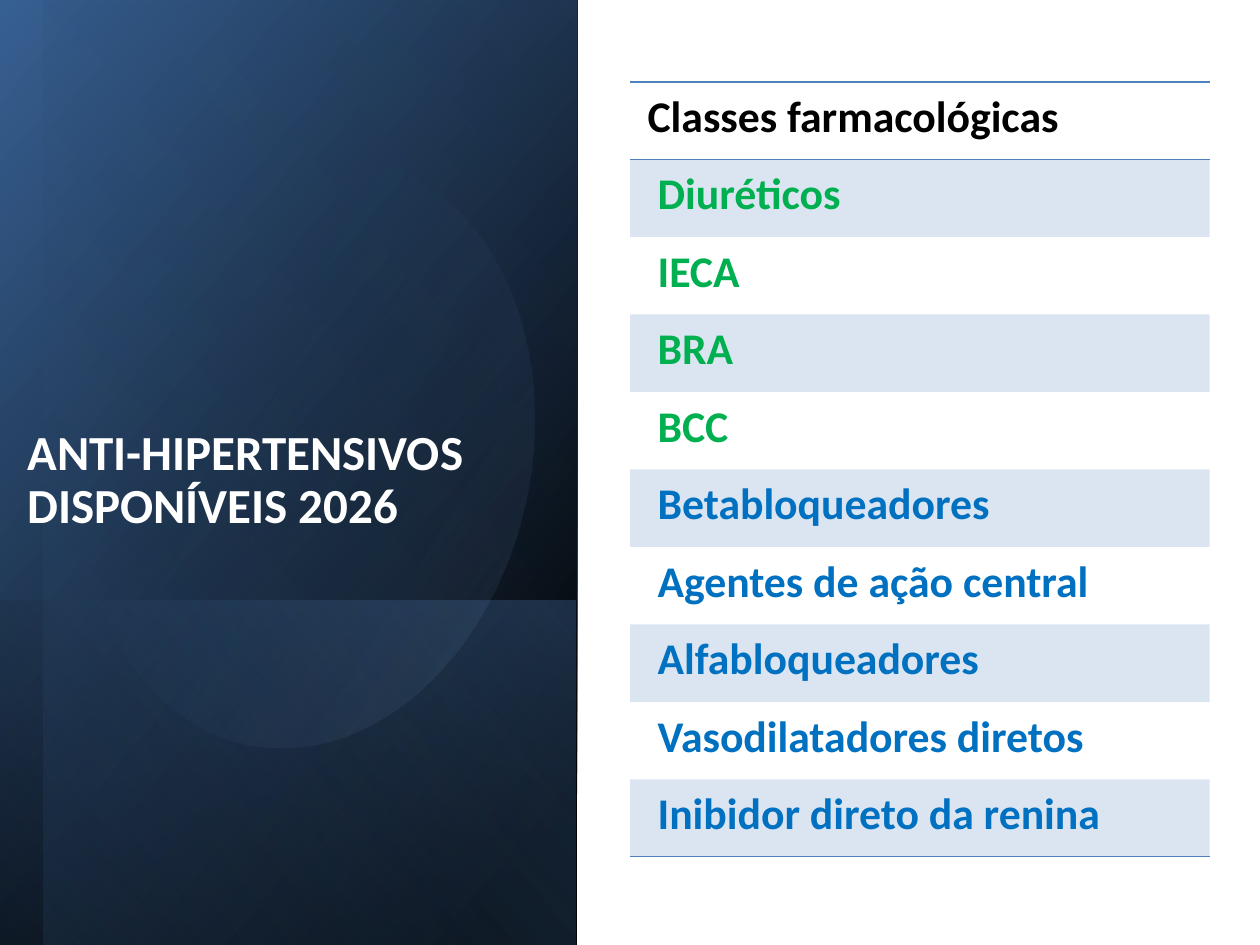
import pptx
import pptx.dml.color
import pptx.enum.shapes
import pptx.enum.text
import pptx.oxml
import pptx.oxml.ns
import pptx.util
from lxml import etree

Inches = pptx.util.Inches
Pt = pptx.util.Pt
qn = pptx.oxml.ns.qn
RECTANGLE = pptx.enum.shapes.MSO_SHAPE.RECTANGLE
OVAL = pptx.enum.shapes.MSO_SHAPE.OVAL
NO_STYLE = "{2D5ABB26-0587-4C30-8999-92F81FD0307C}"


def rgb(value):
    return pptx.dml.color.RGBColor.from_string(value)


def add_color(parent, color, opacity=100):
    node = etree.SubElement(parent, qn("a:srgbClr"), val=color)
    if opacity < 100:
        etree.SubElement(node, qn("a:alpha"), val=str(opacity * 1000))


class SlideBuilder:
    font = "Calibri"
    blue = "4F81BD"

    def __init__(self, slide):
        self.slide = slide

    def style(self, paragraph, size, color):
        for run in paragraph.runs:
            run.font.name = self.font
            run.font.size = Pt(size)
            run.font.bold = True
            run.font.color.rgb = rgb(color)

    def gradient_shape(self, kind, box, rotation, angle, stops, flip=False):
        shape = self.slide.shapes.add_shape(kind, *map(Inches, box))
        shape.rotation = rotation
        shape.shadow.inherit = False
        shape.line.fill.background()
        shape.fill.gradient()
        shape.fill.gradient_angle = 360 - angle
        properties = shape._element.spPr
        if flip:
            properties.find(qn("a:xfrm")).set("flipH", "1")
        stop_list = properties.find(qn("a:gradFill")).find(qn("a:gsLst"))
        for old_stop in list(stop_list):
            stop_list.remove(old_stop)
        for position, color, opacity in stops:
            stop = etree.SubElement(stop_list, qn("a:gs"), pos=str(position * 1000))
            add_color(stop, color, opacity)

    def title(self, box, text):
        frame = self.slide.shapes.add_textbox(*map(Inches, box)).text_frame
        frame.word_wrap = True
        frame.vertical_anchor = pptx.enum.text.MSO_ANCHOR.BOTTOM
        frame.text = text
        paragraph = frame.paragraphs[0]
        paragraph.line_spacing = 0.9
        paragraph.space_after = Pt(6)
        self.style(paragraph, 28, "FFFFFF")

    def border(self, cell, side):
        line = etree.SubElement(cell._tc.get_or_add_tcPr(), qn(f"a:ln{side}"), w=str(Pt(1)))
        add_color(etree.SubElement(line, qn("a:solidFill")), self.blue)

    def shade(self, cell, opacity):
        cell.fill.solid()
        cell.fill.fore_color.rgb = rgb(self.blue)
        color = cell._tc.tcPr.find(qn("a:solidFill")).find(qn("a:srgbClr"))
        etree.SubElement(color, qn("a:alpha"), val=str(opacity * 1000))

    def class_table(self, box, rows):
        frame = self.slide.shapes.add_table(len(rows), 1, *map(Inches, box))
        table = frame.table
        table._tbl.tblPr.find(qn("a:tableStyleId")).text = NO_STYLE
        table.first_row = table.horz_banding = False
        for index, (name, color) in enumerate(rows):
            cell = table.cell(index, 0)
            cell.margin_left = Inches(0.22 if index else 0.14)
            cell.margin_right = Inches(0.14)
            cell.margin_top = cell.margin_bottom = Inches(0.07)
            cell.text_frame.text = name
            self.style(cell.text_frame.paragraphs[0], 25, color)
            if index == 0:
                self.border(cell, "T")
            if index in (0, len(rows) - 1):
                self.border(cell, "B")
            if index % 2:
                self.shade(cell, 20)
            else:
                cell.fill.background()


def main():
    deck = pptx.Presentation()
    deck.slide_width, deck.slide_height = Inches(10), Inches(7.5)
    builder = SlideBuilder(deck.slides.add_slide(deck.slide_layouts[6]))
    blue = builder.blue

    panels = [
        ((-1.46, 1.46, 7.5, 4.58), 50, [(8, "000000", 100), (100, "376092", 100)]),
        ((0.91, 3.85, 2.74, 4.57), 130, [(2, blue, 29), (100, "000000", 30)]),
        ((-1.29, 1.64, 7.5, 4.23), 130, [(0, "000000", 0), (99, blue, 11)]),
    ]
    for box, angle, stops in panels:
        builder.gradient_shape(RECTANGLE, box, 90, angle, stops, flip=True)
    builder.gradient_shape(
        OVAL, (0.08, 1.82, 4.72, 3.54), 101.6, 290, [(39, blue, 0), (100, "95B3D7", 15)]
    )
    builder.title((0.12, 0.98, 4.25, 3.31), "ANTI-HIPERTENSIVOS DISPONÍVEIS 2026")

    first_line = ["Diuréticos", "IECA", "BRA", "BCC"]
    other_classes = [
        "Betabloqueadores",
        "Agentes de ação central",
        "Alfabloqueadores",
        "Vasodilatadores diretos",
        "Inibidor direto da renina",
    ]
    rows = [("Classes farmacológicas", "000000")]
    rows += [(name, "00B050") for name in first_line]
    rows += [(name, "0070C0") for name in other_classes]
    builder.class_table((5, 0.65, 4.6, 6.15), rows)

    deck.save("out.pptx")


if __name__ == "__main__":
    main()
